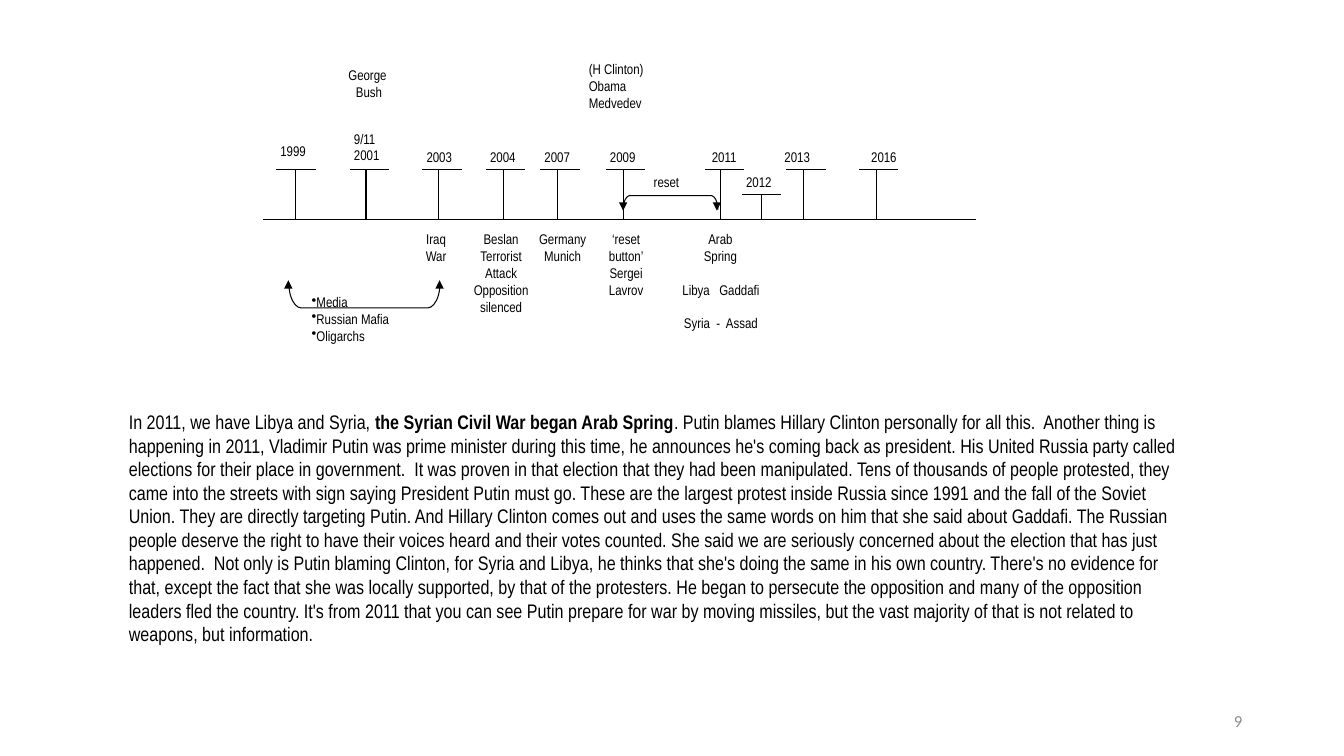
from lxml import etree
from pptx import Presentation
from pptx.dml.color import RGBColor
from pptx.enum import shapes, text
from pptx.oxml.ns import qn
from pptx.util import Inches, Pt

COLORS = {"ink": "000000", "muted": "8C8C8C"}
FONT = "Arial Narrow"
AXIS = {"left": 2.61, "right": 9.68, "y": 2.18}
CAP_WIDTH = 0.39

YEAR_FIELDS = ("lines", "left", "cap", "stem", "shift", "top")
YEARS = [
    (["1999"], 2.74, 1.68, 0.19, 0, 1.37),
    (["9/11", "2001"], 3.47, 1.68, 0.16, 0, 1.25),
    (["2003"], 4.19, 1.68, 0.16, 0, 1.43),
    (["2004"], 4.82, 1.68, 0.17, 0, 1.43),
    (["2007"], 5.36, 1.68, 0.17, 0, 1.43),
    (["2009"], 6.01, 1.68, 0.17, 0, 1.43),
    (["2011"], 6.99, 1.68, 0.16, 0.03, 1.43),
    (["2012"], 7.36, 1.93, 0.19, 0, 1.68),
    (["2013"], 7.8, 1.68, 0.17, -0.06, 1.43),
    (["2016"], 8.52, 1.68, 0.17, 0.08, 1.43),
]

CENTER = {"align": "CENTER"}
NOTES = [
    ((3.3, 0.62, 0.72, 0.44), ["George ", "Bush"], CENTER),
    ((5.8, 0.56, 0.81, 0.81), ["(H Clinton)", "Obama", "Medvedev"], {}),
    ((4.02, 2.25, 0.61, 0.44), ["Iraq", "War"], CENTER),
    ((4.61, 2.25, 0.72, 1), ["Beslan", "Terrorist", "Attack", "Opposition", "silenced"], CENTER),
    ((5.3, 2.25, 0.56, 0.5), ["Germany ", "Munich"], CENTER),
    ((5.93, 2.25, 0.56, 1.06), ["‘reset button’", "Sergei Lavrov"], CENTER),
    ((6.74, 2.25, 0.81, 0.44), ["Arab", "Spring"], CENTER),
    ((6.68, 2.75, 0.94, 0.81), ["Libya   Gaddafi", "Syria  -  Assad"], {**CENTER, "gap": 12}),
    ((3.05, 2.87, 1.19, 0.69), ["Media", "Russian Mafia", "Oligarchs"], {"bullet": "•"}),
    ((6.3, 1.68, 0.62, 0.31), ["reset"], CENTER),
]

SPANS = [
    {"box": (3.49, 2.18, 0.25, 1.5), "rotation": 270, "ends": (2.86, 4.36), "start": 2.81, "stop": 2.78},
    {"box": (6.58, 1.54, 0.14, 0.94), "rotation": 90, "ends": (6.18, 7.11), "start": 2.07, "stop": 2.09},
]

STORY = [
    ("In 2011, we have Libya and Syria, ", False),
    ("the Syrian Civil War began Arab Spring", True),
    (". Putin blames Hillary Clinton personally for all this.  Another thing is happening in 2011, "
     "Vladimir Putin was prime minister during this time, he announces he's coming back as president. "
     "His United Russia party called elections for their place in government.  It was proven in that "
     "election that they had been manipulated. ", False),
    ("Tens of thousands of people protested, they came into the streets with sign saying President "
     "Putin must go. These are the largest protest inside Russia since 1991 and the fall of the Soviet "
     "Union. They are directly targeting Putin. And Hillary Clinton comes out and uses the same words "
     "on him that she said about Gaddafi. ", False),
    ("The Russian people deserve the right to have their voices heard and their votes counted. She said "
     "we are seriously concerned about the election that has just happened.  Not only is Putin blaming "
     "Clinton, for Syria and Libya, he thinks that she's doing the same in his own country. ", False),
    ("There's no evidence for that, except the fact that she was locally supported, by that of the "
     "protesters. He began to persecute the opposition and many of the opposition leaders fled the "
     "country. It's from 2011 that you can see Putin prepare for war by moving missiles, but the vast "
     "majority of that is not related to weapons, but information.", False),
]


def add_text(slide, box, paragraphs, size=10, font=FONT, color="ink", align="LEFT",
             anchor="TOP", inset=(0.04, 0.04), gap=0, bullet=None):
    """Add a text box whose paragraphs are lists of (words, bold) runs."""
    tf = slide.shapes.add_textbox(*map(Inches, box)).text_frame
    side, edge = map(Inches, inset)
    frame = {"word_wrap": True, "vertical_anchor": getattr(text.MSO_ANCHOR, anchor),
             "margin_left": side, "margin_right": side,
             "margin_top": edge, "margin_bottom": edge}
    for name, value in frame.items():
        setattr(tf, name, value)
    for i, runs in enumerate(paragraphs):
        p = tf.add_paragraph() if i else tf.paragraphs[0]
        p.alignment = getattr(text.PP_ALIGN, align)
        if i and gap:
            p.space_before = Pt(gap)
        if bullet:
            etree.SubElement(p._p.get_or_add_pPr(), qn("a:buChar"), char=bullet)
        for words, bold in runs:
            r = p.add_run()
            r.text = words
            for name, value in {"name": font, "size": Pt(size), "bold": bold}.items():
                setattr(r.font, name, value)
            r.font.color.rgb = RGBColor.from_string(COLORS[color])


def style_line(sp):
    """Give a shape or connector the thin timeline stroke."""
    sp.line.color.rgb = RGBColor.from_string(COLORS["ink"])
    sp.line.width = Pt(0.75)


def add_line(slide, x1, y1, x2, y2, arrow=False):
    """Add a straight line, with an optional arrowhead at its end."""
    sp = slide.shapes.add_connector(shapes.MSO_CONNECTOR.STRAIGHT,
                                    *map(Inches, (x1, y1, x2, y2)))
    style_line(sp)
    props = sp._element.spPr
    if arrow:
        etree.SubElement(props.find(qn("a:ln")), qn("a:tailEnd"), type="triangle")
    etree.SubElement(props, qn("a:effectLst"))


def add_year(slide, lines, left, cap, stem, shift, top):
    """Add a dated tick standing on the axis."""
    add_line(slide, left, cap, left + CAP_WIDTH, cap)
    add_line(slide, left + stem, cap, left + stem, AXIS["y"])
    height = 0.31 + 0.17 * (len(lines) - 1)
    add_text(slide, (left + shift, top, CAP_WIDTH, height), plain(lines))


def add_span(slide, box, rotation, ends, start, stop):
    """Add a bracket with an arrow at each end."""
    sp = slide.shapes.add_shape(shapes.MSO_SHAPE.LEFT_BRACKET, *map(Inches, box))
    sp.rotation = rotation
    sp.adjustments[0] = 0.5
    sp.shadow.inherit = False
    sp.fill.background()
    style_line(sp)
    for x in ends:
        add_line(slide, x, start, x, stop, arrow=True)


def plain(lines):
    """Turn each line into a paragraph of one regular run."""
    return [[(line, False)] for line in lines]


def main():
    """Build the timeline slide."""
    prs = Presentation()
    prs.slide_width, prs.slide_height = Inches(13.33), Inches(7.5)
    slide = prs.slides.add_slide(prs.slide_layouts[6])
    add_line(slide, AXIS["left"], AXIS["y"], AXIS["right"], AXIS["y"])
    for year in YEARS:
        add_year(slide, **dict(zip(YEAR_FIELDS, year)))
    for span in SPANS:
        add_span(slide, **span)
    for box, lines, style in NOTES:
        add_text(slide, box, plain(lines), **style)
    add_text(slide, (1.18, 4.02, 10.7, 2.76), [STORY], size=14, inset=(0.1, 0.05))
    add_text(slide, (9.42, 6.95, 3, 0.4), plain(["9"]), size=12, font="Calibri", color="muted",
             align="RIGHT", anchor="MIDDLE", inset=(0.1, 0.05))
    prs.save("out.pptx")


if __name__ == "__main__":
    main()
